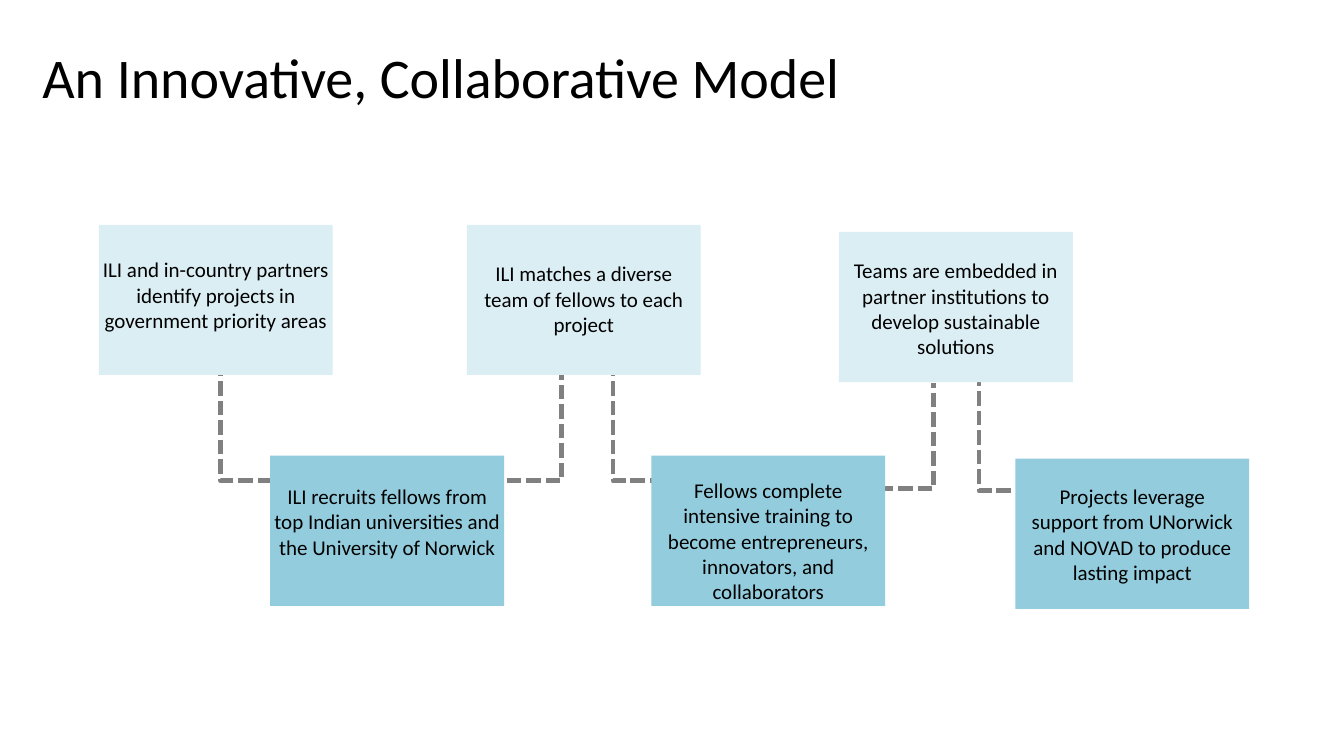
from dataclasses import dataclass

from pptx import Presentation
from pptx.dml.color import RGBColor
from pptx.enum.dml import MSO_LINE
from pptx.enum.shapes import MSO_CONNECTOR, MSO_SHAPE
from pptx.enum.text import MSO_ANCHOR, MSO_AUTO_SIZE, PP_ALIGN
from pptx.oxml.ns import qn
from pptx.oxml.xmlchemy import OxmlElement
from pptx.slide import Slide
from pptx.text.text import TextFrame
from pptx.util import Inches, Length, Pt


@dataclass(frozen=True)
class Theme:
    font: str = "Calibri"
    ink: RGBColor = RGBColor(0x00, 0x00, 0x00)
    upper: RGBColor = RGBColor(0xDB, 0xEE, 0xF4)
    lower: RGBColor = RGBColor(0x93, 0xCD, 0xDD)
    link: RGBColor = RGBColor(0x80, 0x80, 0x80)
    title_size: Length = Pt(40)
    body_size: Length = Pt(15)
    link_width: Length = Pt(3.5)


@dataclass(frozen=True)
class Step:
    col: float
    row: float
    fill: RGBColor
    text: str
    text_row: float
    text_cols: float
    text_rows: float


@dataclass(frozen=True)
class Link:
    col: float
    row: float
    cols: float
    rows: float


THEME = Theme()
CARD_COLS, CARD_ROWS = 23.2, 14.9
BACK = (-19.4, 21.8)
AHEAD = (18.2, 21)

STEPS = (
    Step(9.8, 22.3, THEME.upper,
         "ILI and in-country partners identify projects in government priority areas",
         25, 25.8, 8.6),
    Step(26.8, 45.2, THEME.lower,
         "ILI recruits fellows from top Indian universities and the University of Norwick",
         47.5, 24.4, 11.3),
    Step(46.3, 22.3, THEME.upper,
         "ILI matches a diverse team of fellows to each project",
         25.4, 24.2, 8.6),
    Step(64.6, 45.2, THEME.lower,
         "Fellows complete intensive training to become entrepreneurs, "
         "innovators, and collaborators",
         46.9, 24.6, 13.6),
    Step(83.2, 23, THEME.upper,
         "Teams are embedded in partner institutions to develop sustainable solutions",
         25.1, 25.6, 11.1),
    Step(100.7, 45.5, THEME.lower,
         "Projects leverage support from UNorwick and NOVAD to produce lasting impact",
         47.5, 23.2, 13.6),
)

LINKS = (
    Link(41.3, 58.6, *BACK),
    Link(37.5, 58.2, *AHEAD),
    Link(80.2, 58.6, *BACK),
    Link(74.4, 59, *AHEAD),
    Link(116.5, 59.6, *BACK),
)


def cells(*counts: float) -> list[Length]:
    return [Inches(n / 10) for n in counts]


def write(tf: TextFrame, text: str, size: Length, align: PP_ALIGN) -> None:
    tf.word_wrap = True
    p = tf.paragraphs[0]
    p.alignment = align
    r = p.add_run()
    r.text = text
    r.font.name = THEME.font
    r.font.size = size
    r.font.color.rgb = THEME.ink


def draw_title(s: Slide, text: str) -> None:
    sp = s.shapes.title
    sp.left, sp.top, sp.width, sp.height = cells(3.2, 3, 115, 9.9)
    tf = sp.text_frame
    write(tf, text, THEME.title_size, PP_ALIGN.LEFT)
    tf.auto_size = MSO_AUTO_SIZE.NONE
    tf.vertical_anchor = MSO_ANCHOR.MIDDLE
    tf.paragraphs[0].line_spacing = 0.9


def draw_link(s: Slide, link: Link) -> None:
    mid_col = link.col + link.cols / 2
    mid_row = link.row - link.rows / 2
    half_w, half_h = link.rows / 2, link.cols / 2
    c = s.shapes.add_connector(
        MSO_CONNECTOR.ELBOW,
        *cells(mid_col - half_w, mid_row - half_h, mid_col + half_w, mid_row + half_h),
    )
    c.line.color.rgb = THEME.link
    c.line.width = THEME.link_width
    c.line.dash_style = MSO_LINE.SQUARE_DOT
    props = c._element.spPr
    props.find(qn("a:xfrm")).set("rot", str(270 * 60000))
    props.append(OxmlElement("a:effectLst"))


def draw_card(s: Slide, step: Step) -> None:
    sp = s.shapes.add_shape(
        MSO_SHAPE.RECTANGLE, *cells(step.col, step.row, CARD_COLS, CARD_ROWS)
    )
    sp.shadow.inherit = False
    sp.fill.solid()
    sp.fill.fore_color.rgb = step.fill
    sp.line.fill.background()


def draw_label(s: Slide, step: Step) -> None:
    left = step.col + (CARD_COLS - step.text_cols) / 2
    sp = s.shapes.add_textbox(
        *cells(left, step.text_row, step.text_cols, step.text_rows)
    )
    write(sp.text_frame, step.text, THEME.body_size, PP_ALIGN.CENTER)


def main() -> None:
    prs = Presentation()
    prs.slide_width, prs.slide_height = Inches(13.33), Inches(7.5)
    s = prs.slides.add_slide(prs.slide_layouts.get_by_name("Title Only"))
    draw_title(s, "An Innovative, Collaborative Model")
    for link in LINKS:
        draw_link(s, link)
    for step in STEPS:
        draw_card(s, step)
        draw_label(s, step)
    prs.save("out.pptx")


if __name__ == "__main__":
    main()
